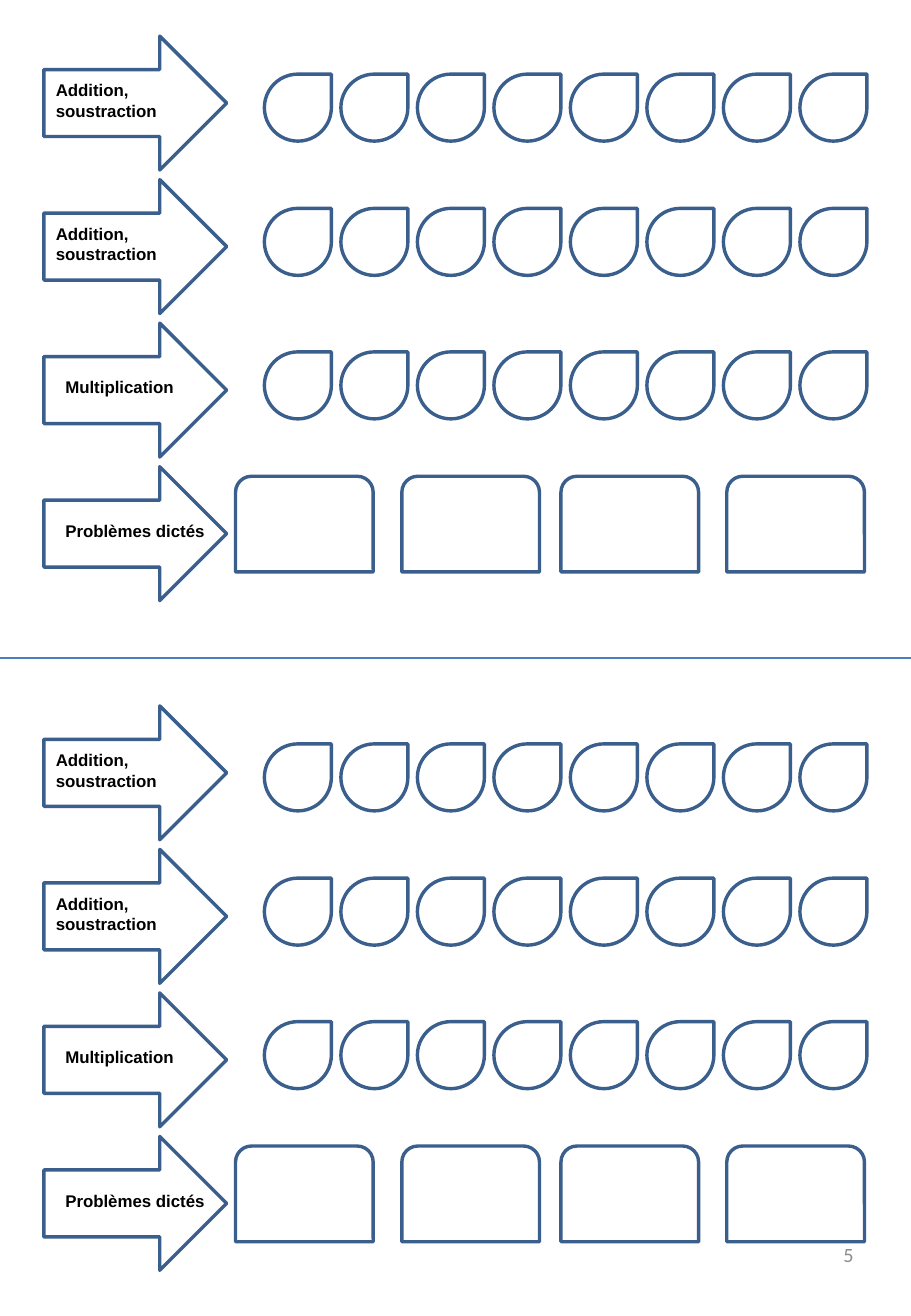
from lxml import etree
from pptx import Presentation
from pptx.dml.color import RGBColor
from pptx.enum import shapes, text
from pptx.oxml import ns
from pptx.util import Pt

OUTLINE = RGBColor(0x3A, 0x5F, 0x8C)
DIVIDER = RGBColor(0x4B, 0x7E, 0xBC)
BLACK = RGBColor(0, 0, 0)
GREY = RGBColor(0x8C, 0x8C, 0x8C)

PAGE_W, PAGE_H = 540, 779.76
ROW_PITCH = 85.04
ARROW_W, ARROW_H = 108.4, 79.37
DROP_LEFT, DROP_PITCH, DROP_SIZE, DROP_COUNT = 130.7, 45.35, 39.7, 8
CARD_LEFTS = (113.6, 212.2, 306.5, 404.8)
CARD_TOP, CARD_W, CARD_H = 5.7, 81.6, 56.7

DRILL_ROWS = [
    ("Addition, soustraction", 0, 22.5, 102, 31.5, 22.5),
    ("Addition, soustraction", 0, 22.5, 108, 31.5, 17),
    ("Multiplication", 5.67, 28.3, 102, 19.4, 17),
]


def add_outline(slide, kind, x, y, w, h):
    sp = slide.shapes.add_shape(kind, Pt(x), Pt(y), Pt(w), Pt(h))
    sp.shadow.inherit = False
    sp.fill.background()
    sp.line.color.rgb = OUTLINE
    sp.line.width = Pt(2)


def add_text(slide, content, x, y, w, h, font, size, color):
    tf = slide.shapes.add_textbox(Pt(x), Pt(y), Pt(w), Pt(h)).text_frame
    tf.word_wrap = True
    p = tf.paragraphs[0]
    p.text = content
    r = p.runs[0]
    r.font.name = font
    r.font.size = Pt(size)
    r.font.color.rgb = color
    return tf


def add_arrow_label(slide, label, x, y, dx, dy, w, h):
    add_outline(slide, shapes.MSO_SHAPE.RIGHT_ARROW, x, y, ARROW_W, ARROW_H)
    tf = add_text(slide, label, x + dx, y + dy, w, h, "Arial", 10, BLACK)
    tf.auto_size = text.MSO_AUTO_SIZE.SHAPE_TO_FIT_TEXT
    tf.paragraphs[0].runs[0].font.bold = True


def add_drill_row(slide, x, y, label, dx, dy, w, h, drop_dy):
    add_arrow_label(slide, label, x, y, dx, dy, w, h)
    for i in range(DROP_COUNT):
        add_outline(slide, shapes.MSO_SHAPE.TEAR, x + DROP_LEFT + i * DROP_PITCH,
                    y + drop_dy, DROP_SIZE, DROP_SIZE)


def add_problem_row(slide, x, y):
    add_arrow_label(slide, "Problèmes dictés", x, y, 5.67, 28.5, 102, 19.4)
    for left in CARD_LEFTS:
        add_outline(slide, shapes.MSO_SHAPE.ROUND_2_SAME_RECTANGLE,
                    x + left, y + CARD_TOP, CARD_W, CARD_H)


def add_worksheet(slide, x, y):
    for i, row in enumerate(DRILL_ROWS):
        add_drill_row(slide, x, y + i * ROW_PITCH, *row)
    add_problem_row(slide, x, y + len(DRILL_ROWS) * ROW_PITCH)


def add_divider(slide, y):
    line = slide.shapes.add_connector(shapes.MSO_CONNECTOR.STRAIGHT,
                                      Pt(0), Pt(y), Pt(PAGE_W), Pt(y))
    line.line.color.rgb = DIVIDER
    line.line.width = Pt(0.75)
    etree.SubElement(line._element.spPr, ns.qn("a:effectLst"))


def add_page_number(slide, x, y, w, h):
    tf = add_text(slide, "5", x, y, w, h, "Calibri", 12, GREY)
    tf.vertical_anchor = text.MSO_ANCHOR.MIDDLE
    tf.paragraphs[0].alignment = text.PP_ALIGN.RIGHT


def main():
    prs = Presentation()
    prs.slide_width, prs.slide_height = Pt(PAGE_W), Pt(PAGE_H)
    slide = prs.slides.add_slide(prs.slide_layouts[6])
    add_divider(slide, PAGE_H / 2)
    for top in (21.4, 418.25):
        add_worksheet(slide, 26, top)
    add_page_number(slide, 387, 722.7, 126, 41.5)
    prs.save("out.pptx")


if __name__ == "__main__":
    main()
